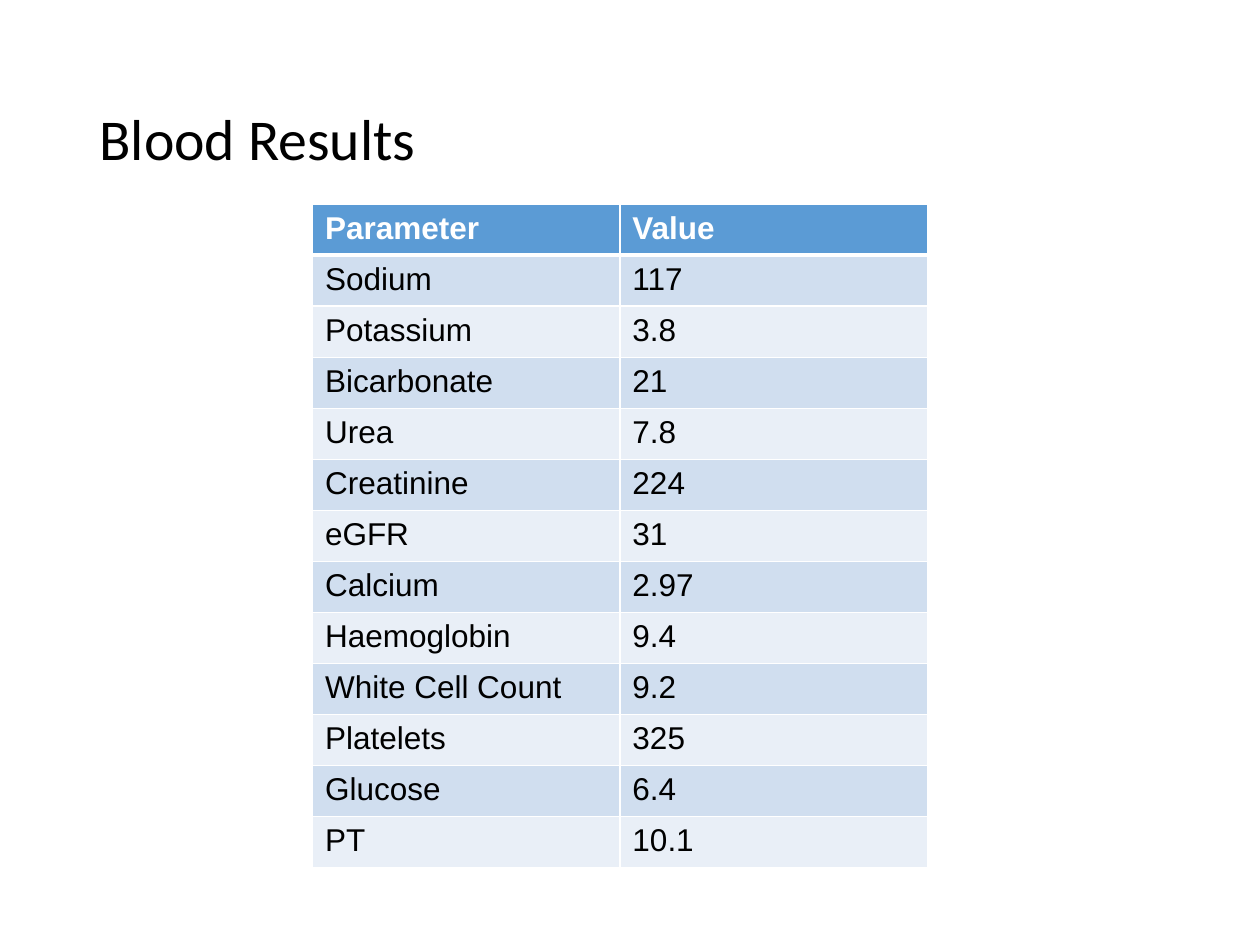
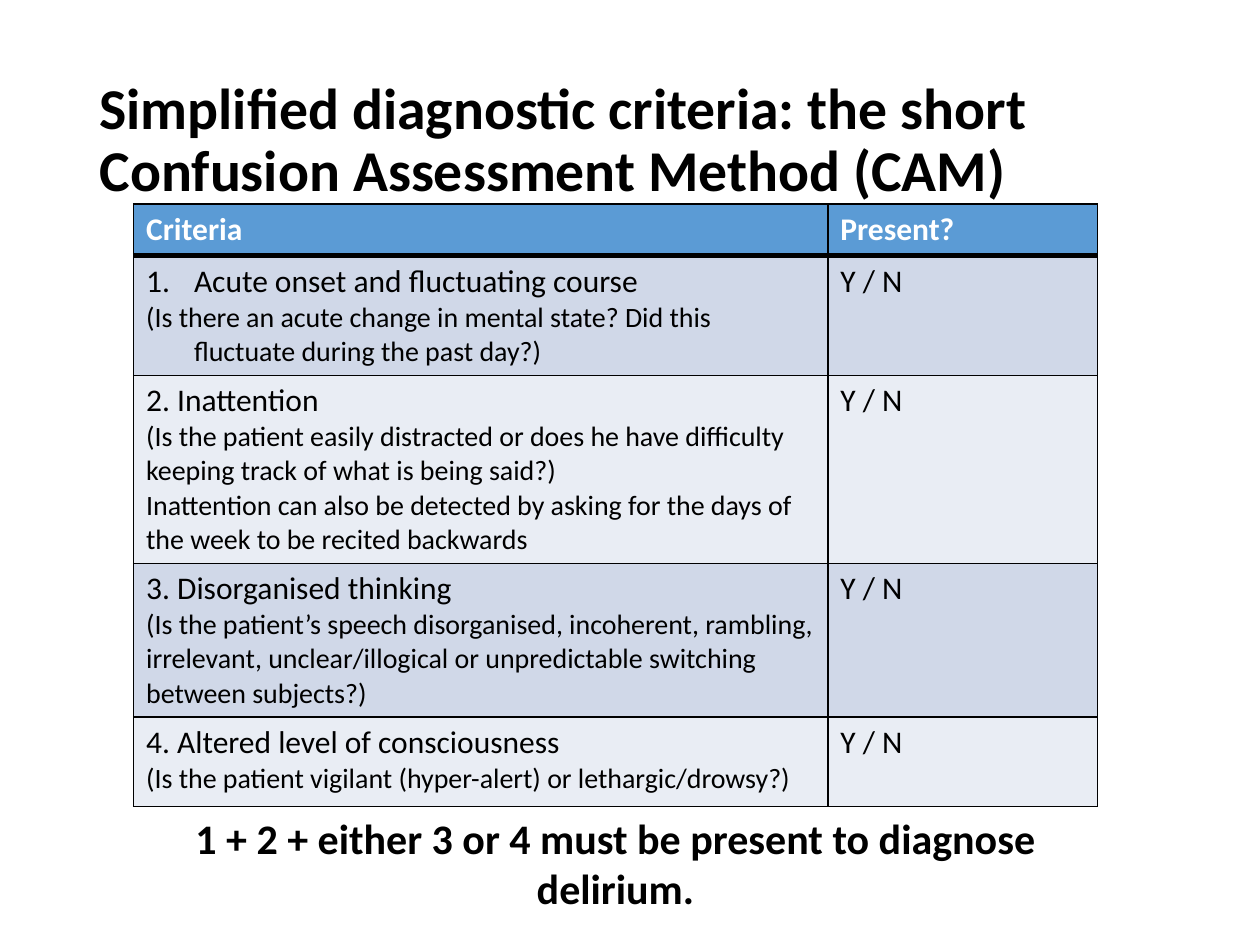
import pptx
import pptx.util
import pptx.dml.color
import pptx.enum.text
import pptx.oxml.ns
from lxml import etree

Inches, Pt = pptx.util.Inches, pptx.util.Pt
BLACK, WHITE, HEADER = "000000", "FFFFFF", "5B9BD5"
ANSWER = ["Y / N"]

BLOODS = {
    "title": "Blood Results", "title_bold": False,
    "left": 2.48, "cols": [2.44, 2.44], "rows": [5.27 / 13] * 13,
    "font": "Arial", "border": WHITE, "bands": ["D0DEEF", "E9EFF7"],
    "cells": [[[name], [value]] for name, value in [
        ("Parameter", "Value"), ("Sodium", "117"), ("Potassium", "3.8"),
        ("Bicarbonate", "21"), ("Urea", "7.8"), ("Creatinine", "224"),
        ("eGFR", "31"), ("Calcium", "2.97"), ("Haemoglobin", "9.4"),
        ("White Cell Count", "9.2"), ("Platelets", "325"),
        ("Glucose", "6.4"), ("PT", "10.1"),
    ]],
}
CAM = {
    "title": "Simplified diagnostic criteria: the short Confusion Assessment Method (CAM)",
    "title_bold": True,
    "left": 1.06, "cols": [5.51, 2.14], "rows": [0.41, 0.94, 1.49, 1.22, 0.71],
    "font": "Calibri", "border": BLACK, "bands": ["D0D8E8", "E9EDF4"],
    "cells": [
        [["Criteria"], ["Present?"]],
        [["Acute onset and fluctuating course",
          "(Is there an acute change in mental state? Did this fluctuate during the past day?)"],
         ANSWER],
        [["2. Inattention",
          "(Is the patient easily distracted or does he have difficulty keeping track of "
          "what is being said?)",
          "Inattention can also be detected by asking for the days of the week to be "
          "recited backwards"], ANSWER],
        [["3. Disorganised thinking",
          "(Is the patient’s speech disorganised, incoherent, rambling, irrelevant, "
          "unclear/illogical or unpredictable switching between subjects?)"], ANSWER],
        [["4. Altered level of consciousness",
          "(Is the patient vigilant (hyper-alert) or lethargic/drowsy?)"], ANSWER],
    ],
}
RULE = "1 + 2 + either 3 or 4 must be present to diagnose delirium."


def rgb(value):
    return pptx.dml.color.RGBColor.from_string(value)


def sub(parent, tag, **attrs):
    return etree.SubElement(parent, pptx.oxml.ns.qn(tag), attrs)


def write(p, text, size, name, color=BLACK, bold=False):
    r = p.add_run()
    r.text = text
    for key, value in {"size": Pt(size), "name": name, "bold": bold}.items():
        setattr(r.font, key, value)
    r.font.color.rgb = rgb(color)


def add_borders(cell, color, widths):
    tcPr = cell._tc.get_or_add_tcPr()
    for side, width in widths.items():
        line = sub(tcPr, "a:ln" + side, w=str(Pt(width)))
        sub(sub(line, "a:solidFill"), "a:srgbClr", val=color)


def hang(p, numbered):
    pPr = p._p.get_or_add_pPr()
    indent = Inches(0.38)
    pPr.set("marL", str(indent))
    pPr.set("indent", str(-indent))
    if numbered:
        sub(sub(pPr, "a:buClr"), "a:srgbClr", val=BLACK)
        sub(pPr, "a:buFont", typeface="+mj-lt")
        sub(pPr, "a:buAutoNum", type="arabicPeriod")
    else:
        sub(pPr, "a:buNone")


def add_title(s, text, bold):
    sp = s.shapes.title
    sp.left, sp.top, sp.width, sp.height = map(Inches, (0.69, 0.4, 8.62, 1.45))
    tf = sp.text_frame
    for key, value in {"word_wrap": True,
                       "auto_size": pptx.enum.text.MSO_AUTO_SIZE.NONE,
                       "vertical_anchor": pptx.enum.text.MSO_ANCHOR.MIDDLE}.items():
        setattr(tf, key, value)
    p = tf.paragraphs[0]
    p.alignment = pptx.enum.text.PP_ALIGN.LEFT
    p.line_spacing = 0.9
    write(p, text, 33, "Calibri", bold=bold)


def add_table(s, data):
    rows, cols = data["rows"], data["cols"]
    table = s.shapes.add_table(
        len(rows), len(cols), Inches(data["left"]), Inches(1.62),
        Inches(sum(cols)), Inches(sum(rows))).table
    for col, width in zip(table.columns, cols):
        col.width = Inches(width)
    for i, (row, height) in enumerate(zip(table.rows, rows)):
        row.height = Inches(height)
        header = i == 0
        for cell, texts in zip(row.cells, data["cells"][i]):
            add_borders(cell, data["border"], {
                "L": 1, "R": 1, "T": 3 if i == 1 else 1, "B": 3 if header else 1})
            cell.fill.solid()
            cell.fill.fore_color.rgb = rgb(HEADER if header else data["bands"][(i - 1) % 2])
            tf = cell.text_frame
            for j, text in enumerate(texts):
                p = tf.add_paragraph() if j else tf.paragraphs[0]
                write(p, text, 16 if j else 18, data["font"],
                      WHITE if header else BLACK, header)
    return table


def add_slide(prs, data):
    s = prs.slides.add_slide(prs.slide_layouts[5])
    add_title(s, data["title"], data["title_bold"])
    return s, add_table(s, data)


def main():
    prs = pptx.Presentation()
    prs.slide_width, prs.slide_height = Inches(10), Inches(7.5)
    add_slide(prs, BLOODS)
    s, table = add_slide(prs, CAM)
    for j, p in enumerate(table.cell(1, 0).text_frame.paragraphs):
        hang(p, numbered=j == 0)
    tf = s.shapes.add_textbox(*map(Inches, (1.3, 6.4, 7.17, 0.4))).text_frame
    tf.word_wrap = True
    p = tf.paragraphs[0]
    p.alignment = pptx.enum.text.PP_ALIGN.CENTER
    write(p, RULE, 24, "Calibri", bold=True)
    prs.save("out.pptx")


if __name__ == "__main__":
    main()
